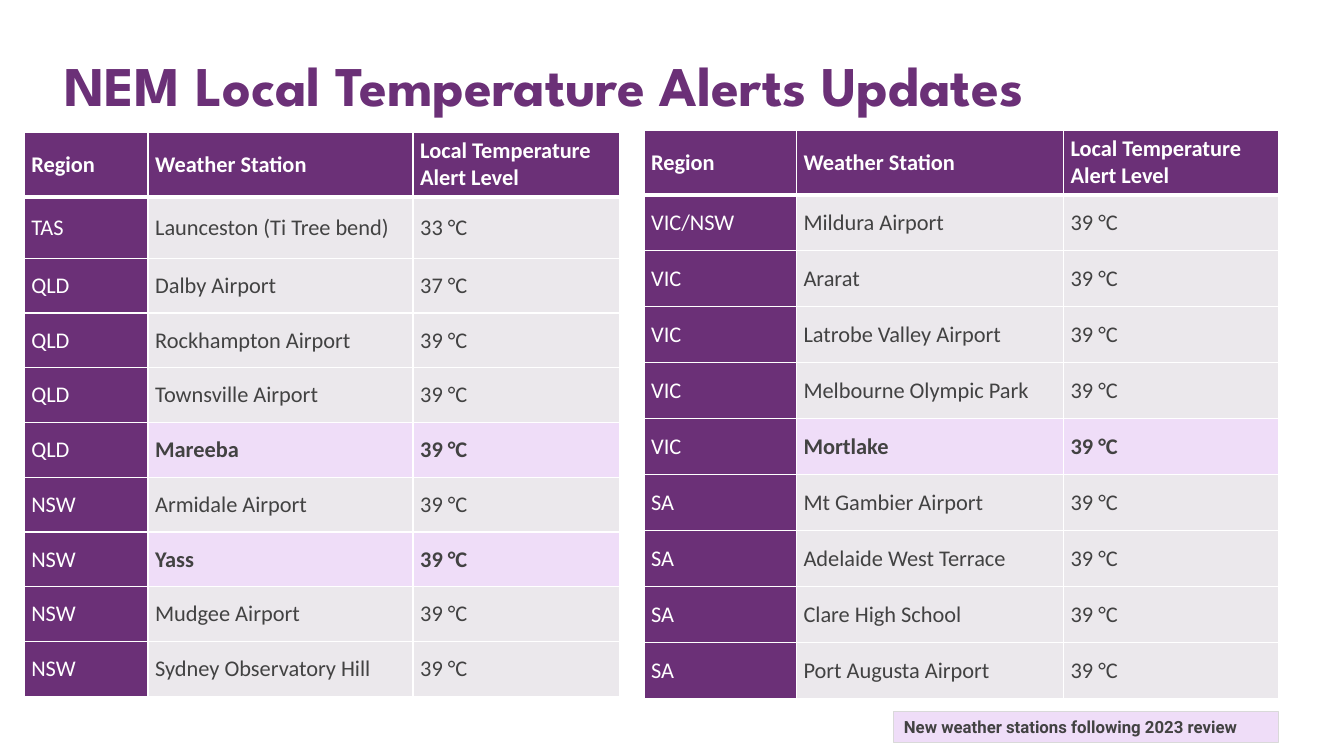
from lxml.etree import SubElement as Sub
from pptx import Presentation
from pptx.dml.color import RGBColor as Rgb
from pptx.enum.shapes import MSO_SHAPE as Shape
from pptx.enum.text import MSO_ANCHOR as Anchor, MSO_AUTO_SIZE as Fit, PP_ALIGN as Align
from pptx.oxml.ns import qn
from pptx.util import Cm, Pt

HUES = {"plum": "6B3077", "lilac": "EFDDF8", "grey": "EBE8EC",
        "ink": "424242", "white": "FFFFFF", "edge": "D9D9D9"}
HEAD = ("Region", "Weather Station", "Local Temperature Alert Level")
NEW = {"Mareeba", "Yass", "Mortlake"}
NORTH = [
    ("TAS", "Launceston (Ti Tree bend)", 33),
    ("QLD", "Dalby Airport", 37),
    ("QLD", "Rockhampton Airport", 39),
    ("QLD", "Townsville Airport", 39),
    ("QLD", "Mareeba", 39),
    ("NSW", "Armidale Airport", 39),
    ("NSW", "Yass", 39),
    ("NSW", "Mudgee Airport", 39),
    ("NSW", "Sydney Observatory Hill", 39),
]
SOUTH = [
    ("VIC/NSW", "Mildura Airport", 39),
    ("VIC", "Ararat", 39),
    ("VIC", "Latrobe Valley Airport", 39),
    ("VIC", "Melbourne Olympic Park", 39),
    ("VIC", "Mortlake", 39),
    ("SA", "Mt Gambier Airport", 39),
    ("SA", "Adelaide West Terrace", 39),
    ("SA", "Clare High School", 39),
    ("SA", "Port Augusta Airport", 39),
]


def hue(name):
    return Rgb.from_string(HUES[name])


def put(item, values):
    for key, value in values.items():
        setattr(item, key, value)


class Deck:
    """Holds the text styles and the current slide."""

    fonts = {"title": ("League Spartan", 40), "cell": ("Calibri", 16),
             "note": ("Roboto", 12)}

    def __init__(self, show):
        self.slide = show.slides.add_slide(show.slide_layouts[5])

    def label(self, frame, text, style, color, bold):
        para = frame.paragraphs[0]
        para.alignment = Align.LEFT
        run = para.add_run()
        run.text = text
        name, size = self.fonts[style]
        put(run.font, {"name": name, "size": Pt(size), "bold": bold})
        run.font.color.rgb = hue(color)

    def title(self, text, left, top, width, height):
        box = self.slide.shapes.title
        put(box, {"left": Cm(left), "top": Cm(top),
                  "width": Cm(width), "height": Cm(height)})
        frame = box.text_frame
        put(frame, {"word_wrap": True, "auto_size": Fit.NONE,
                    "vertical_anchor": Anchor.MIDDLE, "margin_bottom": Cm(1.3)})
        self.label(frame, text, "title", "plum", True)
        frame.paragraphs[0].line_spacing = 0.9

    def note(self, text, left, top, width, height):
        box = self.slide.shapes.add_shape(
            Shape.RECTANGLE, Cm(left), Cm(top), Cm(width), Cm(height))
        box.shadow.inherit = False
        box.fill.solid()
        box.fill.fore_color.rgb = hue("lilac")
        box.line.color.rgb = hue("edge")
        box.line.width = Pt(0.75)
        put(box.text_frame, {"word_wrap": True, "vertical_anchor": Anchor.MIDDLE})
        self.label(box.text_frame, text, "note", "ink", True)

    def rule(self, cell, base):
        """Draws white cell borders, with the lower one base points wide."""
        props = cell._tc.get_or_add_tcPr()
        for side, width in (("L", 1), ("R", 1), ("T", 1), ("B", base)):
            line = Sub(props, qn(f"a:ln{side}"), w=str(Pt(width)))
            fill = Sub(line, qn("a:solidFill"))
            Sub(fill, qn("a:srgbClr"), val=HUES["white"])

    def cell(self, cell, text, fill, color, bold, base):
        self.rule(cell, base)
        cell.fill.solid()
        cell.fill.fore_color.rgb = hue(fill)
        put(cell, {"vertical_anchor": Anchor.MIDDLE, "margin_left": Cm(0.18),
                   "margin_right": Cm(0.18), "margin_top": 0, "margin_bottom": 0})
        self.label(cell.text_frame, text, "cell", color, bold)

    def table(self, data, left, top, cols, rows):
        grid = self.slide.shapes.add_table(
            len(rows), len(cols), Cm(left), Cm(top),
            Cm(sum(cols)), Cm(sum(rows))).table
        for col, width in zip(grid.columns, cols):
            col.width = Cm(width)
        for row, height in zip(grid.rows, rows):
            row.height = Cm(height)
        for c, text in enumerate(HEAD):
            self.cell(grid.cell(0, c), text, "plum", "white", True, 3)
        for r, (region, place, level) in enumerate(data, 1):
            new = place in NEW
            fill = "lilac" if new else "grey"
            self.cell(grid.cell(r, 0), region, "plum", "white", False, 1)
            for c, text in enumerate((place, f"{level} °C"), 1):
                self.cell(grid.cell(r, c), text, fill, "ink", new, 1)


def main():
    show = Presentation()
    put(show, {"slide_width": Cm(33.87), "slide_height": Cm(19.05)})
    deck = Deck(show)
    deck.title("NEM Local Temperature Alerts Updates", 1.37, 1.12, 28.27, 3.38)
    deck.table(NORTH, 0.61, 3.33, (3.12, 6.68, 5.21), [1.63, 1.55] + [1.38] * 8)
    deck.table(SOUTH, 16.23, 3.28, (3.84, 6.73, 5.41), [1.63] + [1.41] * 9)
    deck.note("New weather stations following 2023 review", 22.53, 17.93, 9.7, 0.77)
    show.save("out.pptx")


if __name__ == "__main__":
    main()
